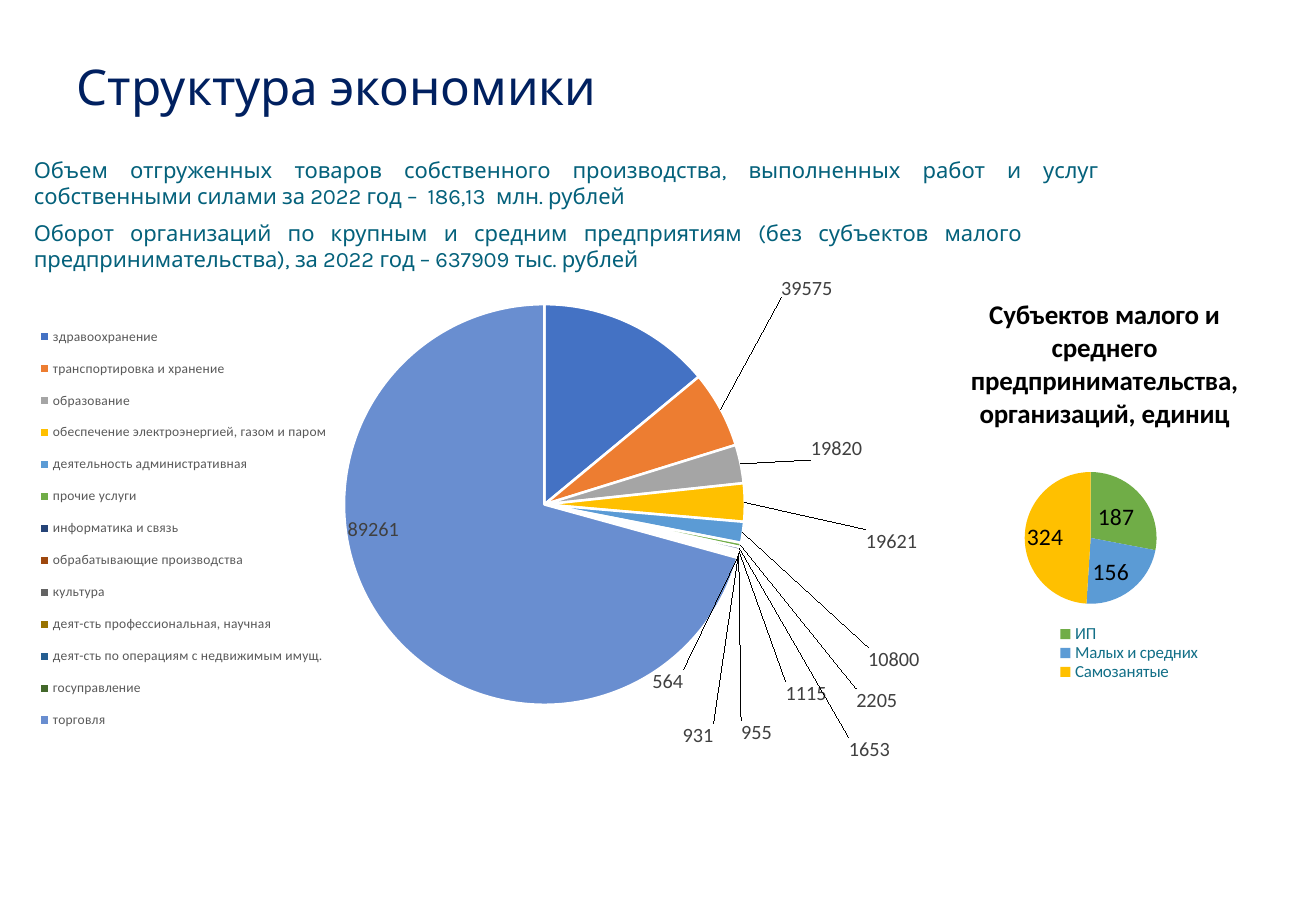
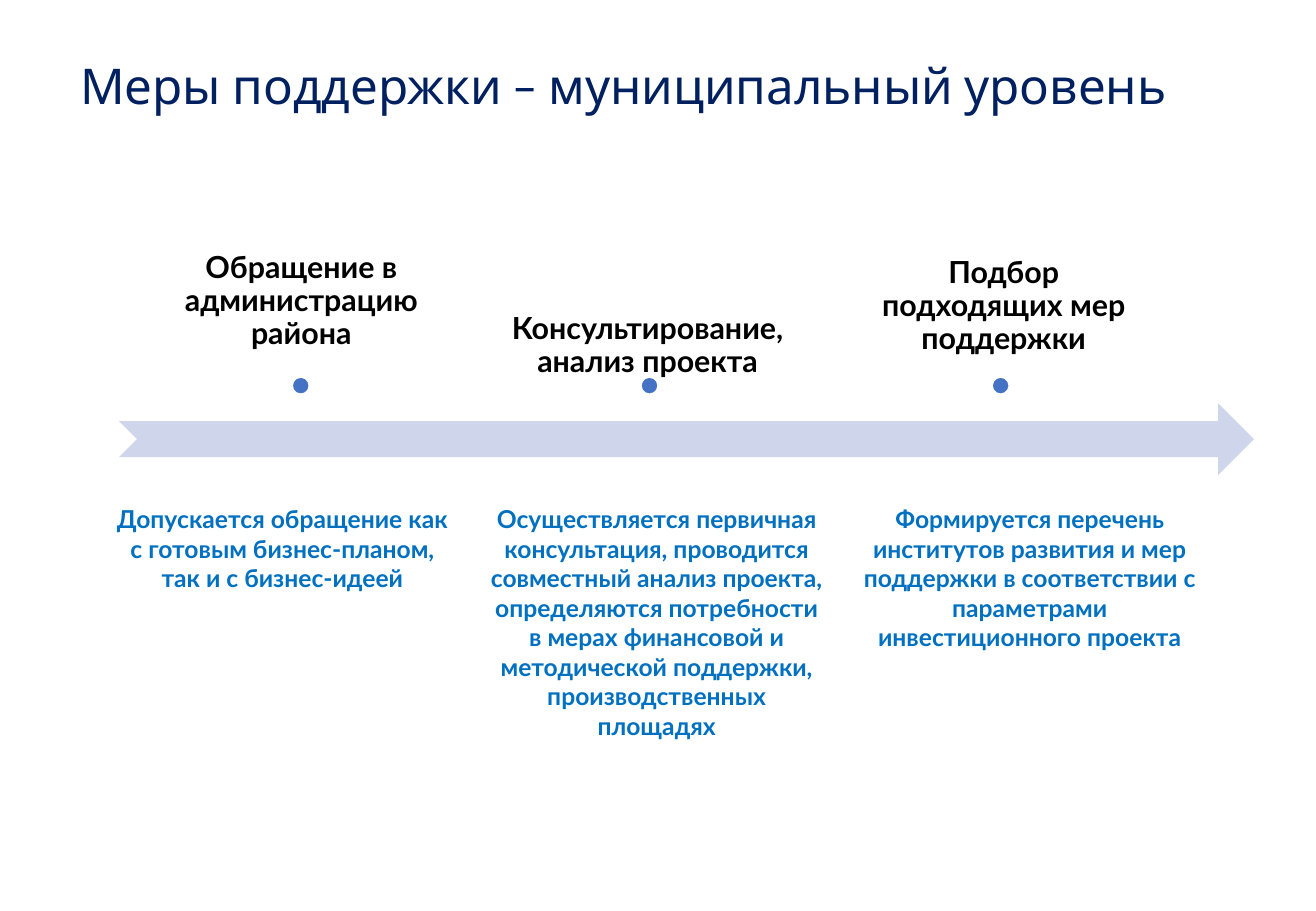
import math
from lxml import etree
from pptx import Presentation
from pptx.chart.data import CategoryChartData
from pptx.dml.color import RGBColor
from pptx.enum import chart as ch, shapes, text
from pptx.oxml.ns import qn
from pptx.util import Inches, Pt

NAVY = RGBColor(0x00, 0x20, 0x60)
TEAL = RGBColor(0x04, 0x61, 0x7B)
LEGEND_TEAL = RGBColor(0x12, 0x6F, 0x87)
BLUE = RGBColor(0x00, 0x70, 0xC0)
DOT_BLUE = RGBColor(0x44, 0x72, 0xC4)
PALE_BLUE = RGBColor(0xCF, 0xD5, 0xEA)
DARK_GREY = RGBColor(0x40, 0x40, 0x40)
GREY = RGBColor(0x59, 0x59, 0x59)
BLACK = RGBColor(0, 0, 0)
WHITE = RGBColor(0xFF, 0xFF, 0xFF)

SECTORS = [  # name, value, slice colour, label centre on the slide
    ("здравоохранение", 89261, "4472C4", (3.05, 4.41)),
    ("транспортировка и хранение", 39575, "ED7D31", (6.59, 2.38)),
    ("образование", 19820, "A5A5A5", (6.83, 3.7)),
    ("обеспечение электроэнергией, газом и паром", 19621, "FFC000", (7.28, 4.46)),
    ("деятельность административная", 10800, "5B9BD5", (7.3, 5.42)),
    ("прочие услуги", 2205, "70AD47", (7.16, 5.76)),
    ("информатика и связь", 1653, "264478", (7.1, 6.16)),
    ("обрабатывающие производства", 1115, "9E480E", (6.58, 5.7)),
    ("культура", 955, "636363", (6.17, 6.02)),
    ("деят-сть профессиональная, научная", 931, "997300", (5.69, 6.04)),
    ("деят-сть по операциям с недвижимым имущ.", 564, "255E91", (5.44, 5.6)),
    ("госуправление", 361, "43682B", None),
    ("торговля", 451049, "698ED0", None),
]
BUSINESSES = [  # name, share, slice colour, label, label shift
    ("ИП", 28, "70AD47", "187", (0, 0)),
    ("Малых и средних", 23, "5B9BD5", "156", (0, 0.02)),
    ("Самозанятые", 49, "FFC000", "324", (-0.03, 0)),
]
STEPS = [  # heading, its box, anchor, dot left, note left, note
    ("Обращение в администрацию района", (1.05, 2.44, 2.86, 0.59), "BOTTOM", 2.4, 0.84,
     "Допускается обращение как с готовым бизнес-планом, так и с бизнес-идеей"),
    ("Консультирование, анализ проекта", (3.9, 2.44, 2.86, 0.59), "TOP", 5.27, 3.92,
     "Осуществляется первичная консультация, проводится совместный анализ проекта, "
     "определяются потребности в мерах финансовой и методической поддержки, "
     "производственных площадях"),
    ("Подбор подходящих мер поддержки", (6.99, 2.48, 2.54, 0.59), "BOTTOM", 8.16, 6.99,
     "Формируется перечень институтов развития и мер поддержки в соответствии "
     "с параметрами инвестиционного проекта"),
]


def set_layout(parent, after, x, y, w=None, h=None, inner=False, edge=True):
    """Give a chart part a manual layout, in fractions of the chart."""
    for old in parent.findall(qn("c:layout")):
        parent.remove(old)
    layout = etree.Element(qn("c:layout"))
    manual = etree.SubElement(layout, qn("c:manualLayout"))
    values = [("layoutTarget", "inner" if inner else None),
              ("xMode", "edge" if edge else None), ("yMode", "edge" if edge else None),
              ("x", x), ("y", y), ("w", w), ("h", h)]
    for name, value in values:
        if value is not None:
            etree.SubElement(manual, qn("c:" + name)).set("val", str(value))
    if after:
        parent.find(qn(after)).addnext(layout)
    else:
        parent.insert(0, layout)


class Deck:
    title_font, body_font, step_font, chart_font = "Karla", "Karla", "Lato", "Calibri"

    def __init__(self):
        self.prs = Presentation()
        self.prs.slide_width, self.prs.slide_height = Inches(10.83), Inches(7.5)
        self.s = None

    def style(self, font, name, size, color, bold=False):
        font.name, font.size, font.bold = name, Pt(size), bold
        font.color.rgb = color

    def fill_text(self, sp, content, name, size, color, bold=False, align="LEFT",
                  anchor="TOP", spacing=1.0, inset=None):
        tf = sp.text_frame
        tf.text = content
        tf.word_wrap, tf.auto_size = True, text.MSO_AUTO_SIZE.NONE
        tf.vertical_anchor = getattr(text.MSO_ANCHOR, anchor)
        if inset is not None:
            tf.margin_left = tf.margin_right = Inches(inset)
            tf.margin_top = tf.margin_bottom = Inches(inset)
        p = tf.paragraphs[0]
        p.alignment, p.line_spacing = getattr(text.PP_ALIGN, align), spacing
        self.style(p.runs[0].font, name, size, color, bold)

    def slide(self, title, left, top, height):
        self.s = self.prs.slides.add_slide(self.prs.slide_layouts[5])
        sp = self.s.shapes.title
        sp.left, sp.top, sp.width, sp.height = map(Inches, (left, top, 9.34, height))
        self.fill_text(sp, title, self.title_font, 29.2, NAVY, anchor="MIDDLE", spacing=0.9)

    def text(self, box, content, *args, **kwargs):
        sp = self.s.shapes.add_textbox(*map(Inches, box))
        self.fill_text(sp, content, *args, **kwargs)

    def shape(self, kind, box, fill, line=None):
        sp = self.s.shapes.add_shape(kind, *map(Inches, box))
        sp.shadow.inherit = False
        sp.fill.solid()
        sp.fill.fore_color.rgb = fill
        if line is None:
            sp.line.fill.background()
        else:
            sp.line.color.rgb, sp.line.width = line, Pt(1.5)

    def pie(self, box, rows, plot_box, legend_pos, legend_box, legend_size, legend_color,
            edge=None):
        data = CategoryChartData()
        data.categories = [row[0] for row in rows]
        data.add_series("Series 1", [row[1] for row in rows])
        chart = self.s.shapes.add_chart(ch.XL_CHART_TYPE.PIE, *map(Inches, box), data).chart
        chart.has_title = False
        self.style(chart.font, self.chart_font, 10, BLACK)
        chart.plots[0].vary_by_categories = True
        series = chart.plots[0].series[0]
        series.data_labels.show_value = False
        for i, row in enumerate(rows):
            fmt = series.points[i].format
            fmt.fill.solid()
            fmt.fill.fore_color.rgb = RGBColor.from_string(row[2])
            if edge is None:
                fmt.line.fill.background()
            else:
                fmt.line.color.rgb, fmt.line.width = edge, Pt(1.5)
        chart.has_legend = True
        chart.legend.position = legend_pos
        chart.legend.include_in_layout = False
        self.style(chart.legend.font, self.chart_font, legend_size, legend_color)
        set_layout(chart.element.xpath(".//c:legend")[0], "c:legendPos", *legend_box)
        set_layout(chart.element.xpath(".//c:plotArea")[0], None, *plot_box, inner=True)
        return chart

    def shift_labels(self, chart, shifts):
        for label, shift in zip(chart.element.xpath(".//c:dLbl"), shifts):
            x, y = (round(v, 4) for v in shift)
            set_layout(label, "c:idx", x, y, edge=False)


def sector_chart(deck):
    box, plot = (0.18, 2.28, 8.32, 5.22), (0.034, 0.043, 0.966, 0.632)
    chart = deck.pie(box, SECTORS, plot, ch.XL_LEGEND_POSITION.LEFT,
                     (0.01, 0.057, 0.3, 0.68), 8, GREY, edge=WHITE)
    # Labels stand apart from the slices, joined by leader lines
    left, top, width, height = box
    cx = left + width * (plot[0] + plot[2] / 2)
    cy = top + height * (plot[1] + plot[3] / 2)
    radius = height * plot[3] / 2
    total, passed, shifts = sum(row[1] for row in SECTORS), 0, []
    for i, (_, value, _, target) in enumerate(SECTORS):
        angle = 2 * math.pi * (passed + value / 2) / total
        passed += value
        if target is None:
            continue
        label = chart.plots[0].series[0].points[i].data_label
        label.position = ch.XL_LABEL_POSITION.OUTSIDE_END
        deck.style(label.font, deck.chart_font, 12, DARK_GREY)
        rise = math.cos(angle)
        side = 0 if abs(rise) < 0.08 else math.copysign(0.1, rise)
        x = cx + radius * math.sin(angle) + 0.0425 * len(str(value))
        y = cy - radius * rise - side
        shifts.append(((target[0] - x) / width, (target[1] - y) / height))
    deck.shift_labels(chart, shifts)


def business_chart(deck):
    chart = deck.pie((7.4, 2.3, 3.44, 3.31), BUSINESSES, (0.3, 0.48, 0.316, 0.328),
                     ch.XL_LEGEND_POSITION.BOTTOM, (0.37, 0.86, 0.36, 0.14), 10, LEGEND_TEAL)
    chart.has_title = True
    tf = chart.chart_title.text_frame
    tf.text = "Субъектов малого и среднего предпринимательства, организаций, единиц"
    deck.style(tf.paragraphs[0].runs[0].font, deck.chart_font, 16, BLACK, True)
    set_layout(chart.element.xpath(".//c:title")[0], "c:tx", 0.16, 0.03)
    for i, row in enumerate(BUSINESSES):
        label = chart.plots[0].series[0].points[i].data_label
        label.text_frame.text = row[3]
        deck.style(label.text_frame.paragraphs[0].runs[0].font, deck.chart_font, 14, BLACK)
        label.position = ch.XL_LABEL_POSITION.CENTER
    deck.shift_labels(chart, [row[4] for row in BUSINESSES])


def main():
    deck = Deck()

    # Structure of the economy
    deck.slide("Структура экономики", 0.53, 0.46, 0.55)
    facts = [
        (1.24, 8.95, "Объем отгруженных товаров собственного производства, выполненных работ "
                     "и услуг собственными силами за 2022 год –  186,13  млн. рублей"),
        (1.76, 8.32, "Оборот организаций по крупным и средним предприятиям (без субъектов "
                     "малого предпринимательства), за 2022 год – 637909 тыс. рублей"),
    ]
    for top, width, fact in facts:
        deck.text((0.18, top, width, 0.54), fact, deck.body_font, 13, TEAL, align="JUSTIFY")
    business_chart(deck)
    sector_chart(deck)

    # Support steps along an arrow
    deck.slide("Меры поддержки – муниципальный уровень", 0.56, 0.42, 0.62)
    deck.shape(shapes.MSO_SHAPE.NOTCHED_RIGHT_ARROW, (0.98, 3.32, 9.34, 0.59), PALE_BLUE)
    for heading, box, anchor, dot_left, note_left, note in STEPS:
        deck.text(box, heading, deck.step_font, 18, BLACK, True, align="CENTER",
                  anchor=anchor, spacing=0.9, inset=0.14)
        deck.shape(shapes.MSO_SHAPE.OVAL, (dot_left, 3.1, 0.15, 0.15), DOT_BLUE, WHITE)
        deck.text((note_left, 4.1, 2.97, 1.82), note, deck.step_font, 14.6, BLUE, True,
                  align="CENTER")

    deck.prs.save("out.pptx")


if __name__ == "__main__":
    main()
